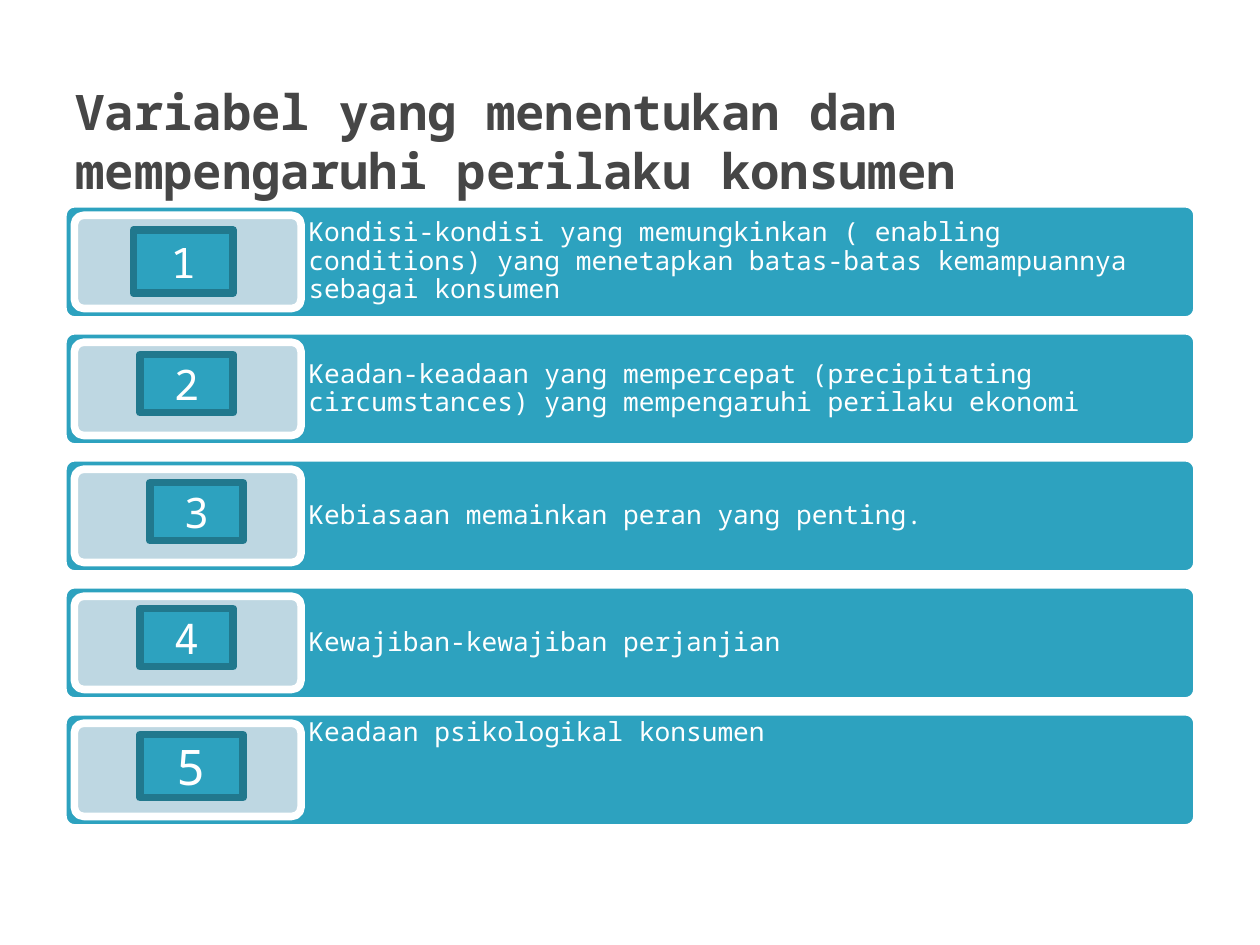
from dataclasses import dataclass

from pptx import Presentation
from pptx.dml.color import RGBColor
from pptx.enum.shapes import MSO_SHAPE as Shape
from pptx.enum.text import MSO_ANCHOR as Anchor, PP_ALIGN as Align
from pptx.util import Cm, Pt

FONT = "Noto Sans Mono"
WHITE = RGBColor(0xFF, 0xFF, 0xFF)
TEAL = RGBColor(0x2D, 0xA2, 0xBF)
DARK = RGBColor(0x21, 0x78, 0x8D)
PALE = RGBColor(0xBE, 0xD7, 0xE2)
GREY = RGBColor(0x46, 0x46, 0x46)

LEFT, WIDTH = 1.27, 22.86
TOP, PITCH, HEIGHT = 4.11, 2.56, 2.34
PAD, PANEL = 0.23, 4.57
INDENT = PAD + PANEL


@dataclass
class Box:
    x: float
    y: float
    w: float
    h: float

    def size(self) -> tuple:
        return Cm(self.x), Cm(self.y), Cm(self.w), Cm(self.h)


@dataclass
class Row:
    text: str
    badge: Box
    size: int = 24
    anchor: Anchor = Anchor.MIDDLE


ROWS = [
    Row("Kondisi-kondisi yang memungkinkan ( enabling conditions) yang "
        "menetapkan batas-batas kemampuannya sebagai konsumen",
        Box(2.69, 0.53, 2.01, 1.27)),
    Row("Keadan-keadaan yang mempercepat (precipitating circumstances) "
        "yang mempengaruhi perilaku ekonomi",
        Box(2.82, 0.48, 1.88, 1.17)),
    Row("Kebiasaan memainkan peran yang penting.",
        Box(3.02, 0.5, 1.88, 1.17)),
    Row("Kewajiban-kewajiban perjanjian",
        Box(2.82, 0.48, 1.88, 1.17)),
    Row("Keadaan psikologikal konsumen",
        Box(2.82, 0.46, 2.08, 1.27), 28, Anchor.TOP),
]


def add_block(slide, kind: Shape, box: Box, fill: RGBColor, line: RGBColor):
    block = slide.shapes.add_shape(kind, *box.size())
    block.shadow.inherit = False
    block.fill.solid()
    block.fill.fore_color.rgb = fill
    block.line.color.rgb = line
    block.line.width = Pt(4.33)
    if kind == Shape.ROUNDED_RECTANGLE:
        block.adjustments[0] = 0.1
    return block


def set_text(shape, text: str, size: int, color: RGBColor, anchor: Anchor,
             align: Align = Align.LEFT, bold: bool = False) -> None:
    frame = shape.text_frame
    frame.text = text
    frame.word_wrap = True
    frame.vertical_anchor = anchor
    para = frame.paragraphs[0]
    para.alignment = align
    font = para.runs[0].font
    font.name, font.size, font.bold = FONT, Pt(size), bold
    font.color.rgb = color


def add_row(slide, row: Row, top: float) -> None:
    bar = Box(LEFT, top, WIDTH, HEIGHT)
    add_block(slide, Shape.ROUNDED_RECTANGLE, bar, TEAL, WHITE)
    area = Box(LEFT + INDENT, top, WIDTH - INDENT, HEIGHT)
    label = slide.shapes.add_textbox(*area.size())
    set_text(label, row.text, 15, WHITE, row.anchor)
    frame = label.text_frame
    frame.margin_left = frame.margin_right = Cm(0.15)
    frame.margin_top = frame.margin_bottom = Cm(0.15)
    frame.paragraphs[0].line_spacing = 0.9
    panel = Box(LEFT + PAD, top + PAD, PANEL, HEIGHT - 2 * PAD)
    add_block(slide, Shape.ROUNDED_RECTANGLE, panel, PALE, WHITE)


def add_badge(slide, row: Row, top: float, number: int) -> None:
    spot = row.badge
    box = Box(spot.x, top + spot.y, spot.w, spot.h)
    badge = add_block(slide, Shape.RECTANGLE, box, TEAL, DARK)
    set_text(badge, str(number), row.size, WHITE, Anchor.MIDDLE, Align.CENTER)


def main() -> None:
    deck = Presentation()
    deck.slide_width, deck.slide_height = Cm(25.4), Cm(19.05)
    slide = deck.slides.add_slide(deck.slide_layouts[6])
    tops = [TOP + i * PITCH for i in range(len(ROWS))]
    for row, top in zip(ROWS, tops):
        add_row(slide, row, top)
    title = slide.shapes.add_textbox(*Box(LEFT, 1.73, WIDTH, 2.21).size())
    set_text(title, "Variabel yang menentukan dan mempengaruhi perilaku konsumen",
             28, GREY, Anchor.MIDDLE, bold=True)
    for number, (row, top) in enumerate(zip(ROWS, tops), 1):
        add_badge(slide, row, top, number)
    deck.save("out.pptx")


if __name__ == "__main__":
    main()
